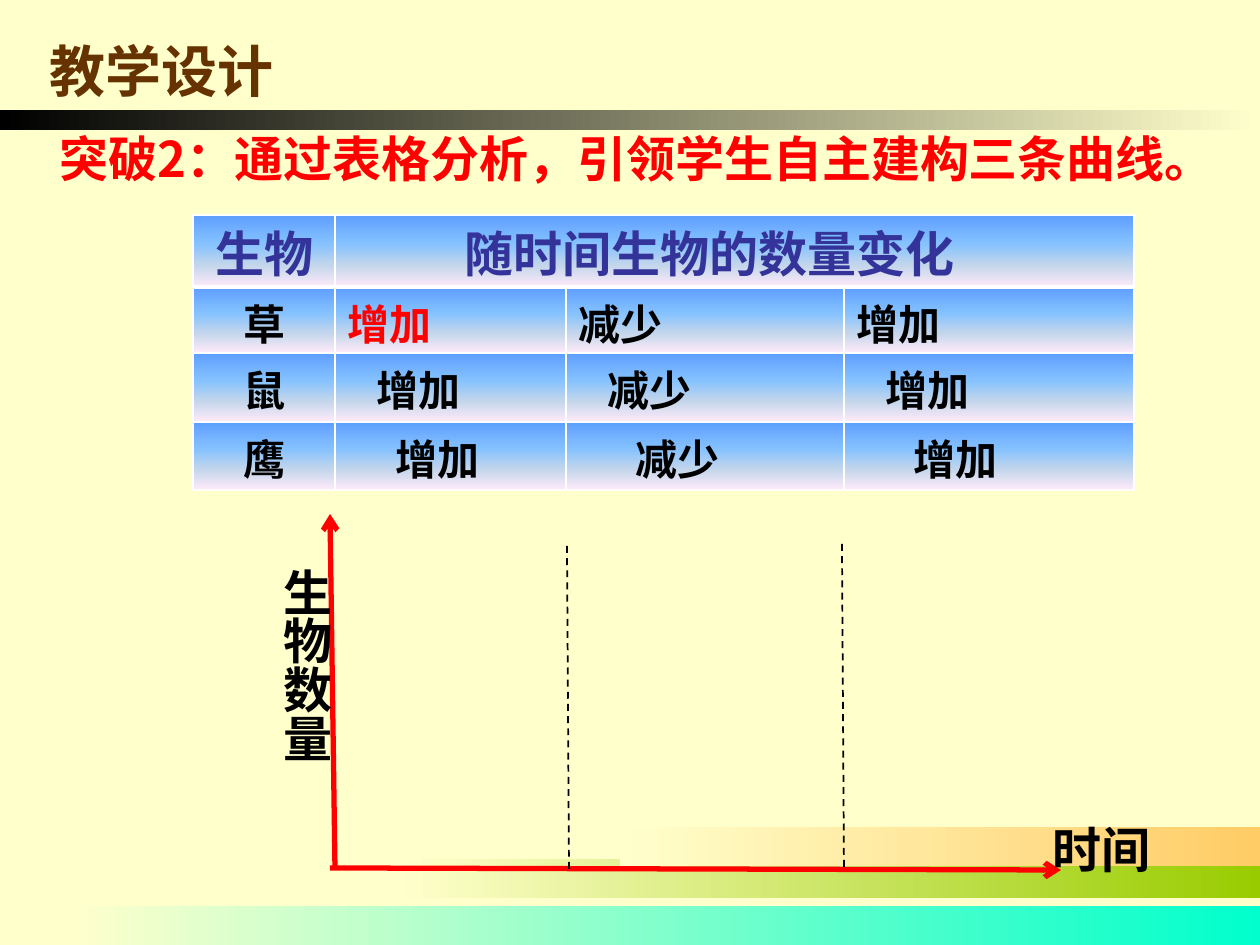
"""Build the teaching design slide with its table and empty curve chart."""
from typing import NamedTuple

from pptx import Presentation
from pptx.dml.color import RGBColor
from pptx.enum.dml import MSO_LINE
from pptx.enum.shapes import MSO_CONNECTOR, MSO_SHAPE
from pptx.enum.text import MSO_ANCHOR, MSO_AUTO_SIZE, PP_ALIGN
from pptx.oxml.ns import qn
from pptx.util import Pt
from lxml import etree

SCALE = 914400 / 126
RECT, LINE, DASH = MSO_SHAPE.RECTANGLE, MSO_CONNECTOR.STRAIGHT, MSO_LINE.DASH
LEFT, CENTER = PP_ALIGN.LEFT, PP_ALIGN.CENTER
TOP, NO_FIT = MSO_ANCHOR.TOP, MSO_AUTO_SIZE.NONE

CREAM, RED, BLACK, NAVY, WHITE = "FFFFCC", "FF0000", "000000", "333399", "FFFFFF"
SANS = "Noto Sans CJK SC"
CELL_STOPS = [(0, "5E9EFF"), (40, "85C2FF"), (70, "C4D6EB"), (100, "FFEBFA")]


class Bar(NamedTuple):
    x: int
    y: int
    w: int
    h: int
    start: str
    end: str


class Label(NamedTuple):
    text: str
    x: int
    y: int
    w: int
    h: int
    size: int
    font: str
    color: str
    top: int = 0
    spacing: float = 1.0
    vertical: bool = False
    wrap: bool = True


class Rule(NamedTuple):
    x1: int
    y1: int
    x2: int
    y2: int
    color: str
    width: int
    arrow: bool


class Entry(NamedTuple):
    text: str
    indent: int = 0
    color: str = BLACK
    align: PP_ALIGN = LEFT


BARS = [
    Bar(397, 859, 863, 39, CREAM, "99CC00"),
    Bar(69, 906, 1191, 39, CREAM, "00FFCC"),
    Bar(620, 827, 640, 39, CREAM, "FFCC66"),
    Bar(0, 110, 1260, 20, BLACK, CREAM),
]
TITLE = Label("教学设计", 37, 36, 314, 79, 32, "Arial", "663300")
LABELS = [
    Label("突破2：通过表格分析，引领学生自主建构三条曲线。", 47, 129, 1144, 72, 28,
          SANS, RED, top=10, spacing=0.82),
    Label("生物数量", 252, 562, 84, 267, 28, "Times New Roman", BLACK, top=6, vertical=True),
    Label("时间", 1040, 819, 123, 72, 28, "Times New Roman", BLACK, wrap=False),
]
RULES = [
    Rule(335, 869, 330, 514, RED, 3, True),
    Rule(330, 868, 1061, 870, RED, 3, True),
    Rule(567, 546, 569, 869, BLACK, 1, False),
    Rule(842, 544, 844, 867, BLACK, 1, False),
]
COLUMNS = [142, 231, 278, 290]
ROWS = [72, 66, 69, 68]
ENTRIES = [
    [Entry("生物", 0, NAVY, CENTER), Entry("随时间生物的数量变化", 117, NAVY)],
    [Entry("草", align=CENTER), Entry("增加", color=RED), Entry("减少"), Entry("增加")],
    [Entry("鼠", align=CENTER), Entry("增加", 29), Entry("减少", 29), Entry("增加", 29)],
    [Entry("鹰", align=CENTER), Entry("增加", 48), Entry("减少", 57), Entry("增加", 57)],
]


def px(n: float) -> int:
    return round(n * SCALE)


def rgb(value: str) -> RGBColor:
    return RGBColor.from_string(value)


def set_gradient(fill, parent, stops, angle: int) -> None:
    fill.gradient()
    fill.gradient_angle = angle
    stop_list = parent.find(".//" + qn("a:gsLst"))
    for stop in list(stop_list):
        stop_list.remove(stop)
    for position, color in stops:
        stop = etree.SubElement(stop_list, qn("a:gs"), pos=str(position * 1000))
        etree.SubElement(stop, qn("a:srgbClr"), val=color)


def format_run(p, size: int, font: str, color: str, east_asian: str = SANS) -> None:
    for r in p.runs:
        r.font.size, r.font.bold, r.font.name = Pt(size), True, font
        r.font.color.rgb = rgb(color)
        etree.SubElement(r._r.get_or_add_rPr(), qn("a:ea"), typeface=east_asian)


def add_bar(slide, bar: Bar) -> None:
    sp = slide.shapes.add_shape(RECT, px(bar.x), px(bar.y), px(bar.w), px(bar.h))
    sp.shadow.inherit = False
    sp.line.fill.background()
    set_gradient(sp.fill, sp._element.spPr, [(0, bar.start), (100, bar.end)], 0)


def write_label(sp, label: Label) -> None:
    sp.left, sp.top, sp.width, sp.height = map(px, (label.x, label.y, label.w, label.h))
    tf = sp.text_frame
    tf.text = label.text
    tf.word_wrap, tf.auto_size, tf.vertical_anchor = label.wrap, NO_FIT, TOP
    tf.margin_top, tf.margin_bottom = px(label.top), 0
    if label.vertical:
        tf.margin_left = tf.margin_right = 0
        tf._txBody.bodyPr.set("vert", "eaVert")
    p = tf.paragraphs[0]
    p.alignment, p.line_spacing = LEFT, label.spacing
    format_run(p, label.size, label.font, label.color)


def add_rule(slide, rule: Rule) -> None:
    line = slide.shapes.add_connector(LINE, px(rule.x1), px(rule.y1), px(rule.x2), px(rule.y2))
    line.line.color.rgb = rgb(rule.color)
    line.line.width = Pt(rule.width)
    if rule.arrow:
        etree.SubElement(line.line._get_or_add_ln(), qn("a:tailEnd"), type="arrow")
    else:
        line.line.dash_style = DASH
    etree.SubElement(line._element.spPr, qn("a:effectLst"))


def style_cell(cell, row: int) -> None:
    tc_pr = cell._tc.get_or_add_tcPr()
    heavy = {0: "lnB", 1: "lnT"}.get(row)
    for side in ("lnL", "lnR", "lnT", "lnB"):
        width = Pt(3 if side == heavy else 1)
        ln = etree.SubElement(tc_pr, qn("a:" + side), w=str(width))
        solid = etree.SubElement(ln, qn("a:solidFill"))
        etree.SubElement(solid, qn("a:srgbClr"), val=WHITE)
    set_gradient(cell.fill, tc_pr, CELL_STOPS, 270)
    cell.vertical_anchor = TOP
    cell.margin_top, cell.margin_bottom = px(1 if row == 0 else 5), 0


def add_change_table(slide) -> None:
    frame = slide.shapes.add_table(len(ROWS), len(COLUMNS), px(193), px(215),
                                   px(sum(COLUMNS)), px(sum(ROWS)))
    table = frame.table
    for column, width in zip(table.columns, COLUMNS):
        column.width = px(width)
    for row, height in zip(table.rows, ROWS):
        row.height = px(height)
    table.cell(0, 1).merge(table.cell(0, 3))
    for i in range(len(ROWS)):
        for j in range(len(COLUMNS)):
            style_cell(table.cell(i, j), i)
        size, font = (28, "Noto Sans CJK JP") if i == 0 else (24, SANS)
        for j, entry in enumerate(ENTRIES[i]):
            cell = table.cell(i, j)
            cell.text_frame.text = entry.text
            if entry.indent:
                cell.margin_left = px(13 + entry.indent)
            p = cell.text_frame.paragraphs[0]
            p.alignment = entry.align
            format_run(p, size, font, entry.color, font)


def main() -> None:
    prs = Presentation()
    prs.slide_width, prs.slide_height = px(1260), px(945)
    slide = prs.slides.add_slide(prs.slide_layouts[5])
    slide.background.fill.solid()
    slide.background.fill.fore_color.rgb = rgb(CREAM)
    for bar in BARS:
        add_bar(slide, bar)
    write_label(slide.shapes.title, TITLE)
    add_change_table(slide)
    for rule in RULES:
        add_rule(slide, rule)
    for label in LABELS:
        write_label(slide.shapes.add_textbox(0, 0, 0, 0), label)
    prs.save("out.pptx")


if __name__ == "__main__":
    main()
